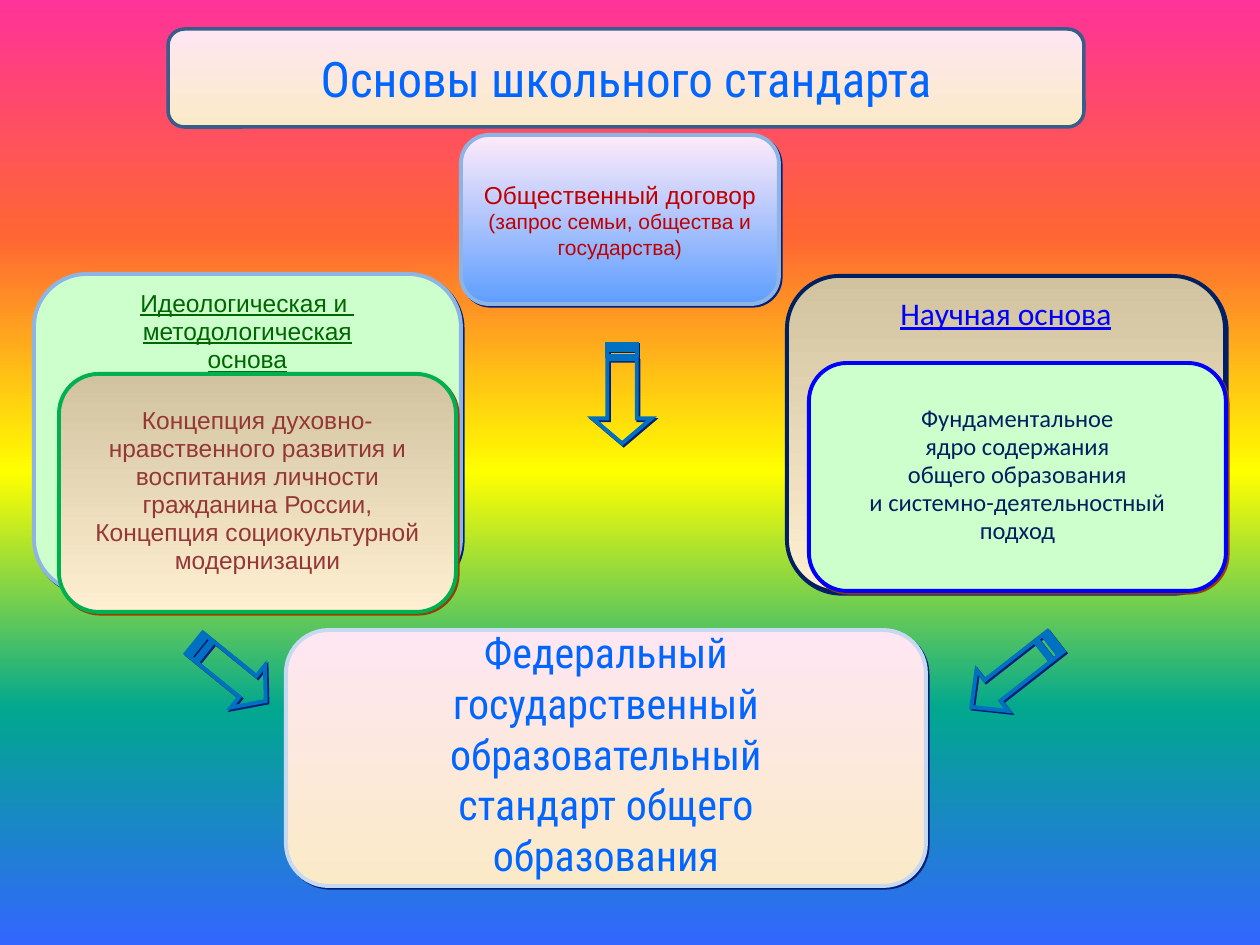
from dataclasses import dataclass

from lxml.etree import SubElement
from pptx import Presentation
from pptx.dml.color import RGBColor
from pptx.enum.shapes import MSO_SHAPE
from pptx.enum.text import MSO_ANCHOR, MSO_AUTO_SIZE, PP_ALIGN
from pptx.oxml.ns import qn
from pptx.util import Emu, Pt


@dataclass(frozen=True)
class Theme:
    rainbow: tuple = ("FF3399", "FF6633", "FFFF00", "01A78F", "3366FF")
    cream: tuple = ("FEE7F2", "FBEAC7")
    sky: tuple = ("FFEBFA", "5E9EFF")
    sand: tuple = ("D1C39F", "FFEFD1")
    mint: tuple = ("CCFFCC",)
    title_line: str = "385D8A"
    blue_line: str = "8EB4E3"
    pale_line: str = "C6D9F1"
    arrow_line: str = "0070C0"
    green_line: str = "00B050"
    navy: str = "002060"
    blue: str = "0000FF"
    accent: str = "0066FF"
    red: str = "C00000"
    brown: str = "953735"
    green: str = "006600"
    navy_shadow: str = "001F7A"
    brown_shadow: str = "993D00"
    sans: str = "Arial"
    plain: str = "Calibri"
    display: str = "Roboto Condensed"
    title: int = 28
    result: int = 24
    heading: int = 18
    body: int = 14
    small: int = 12
    line: float = 2.25


T = Theme()


def px(n):
    return Emu(round(n * 914400 / 126))


def rgb(value):
    return RGBColor.from_string(value)


def paint(sp, colors, line, width=T.line, shadow=None):
    if not colors:
        sp.fill.background()
    elif len(colors) == 1:
        sp.fill.solid()
        sp.fill.fore_color.rgb = rgb(colors[0])
    else:
        sp.fill.gradient()
        sp.fill.gradient_angle = 270
        for stop, color in zip(sp.fill.gradient_stops, colors):
            stop.color.rgb = rgb(color)
    sp.line.color.rgb = rgb(line)
    sp.line.width = Pt(width)
    sp.shadow.inherit = False
    if shadow:
        effects = sp.element.spPr.find(qn("a:effectLst"))
        outer = SubElement(effects, qn("a:outerShdw"), blurRad="0", dist=str(Pt(1.4)),
                           dir="2700000", algn="ctr", rotWithShape="0")
        SubElement(outer, qn("a:srgbClr"), val=shadow)


def write(sp, lines, font, color, underline=False, spacing=1.0, before=0, top=None):
    tf = sp.text_frame
    tf.auto_size = MSO_AUTO_SIZE.NONE
    tf.word_wrap = False
    tf.vertical_anchor = MSO_ANCHOR.MIDDLE if top is None else MSO_ANCHOR.TOP
    if top is not None:
        tf.margin_top = px(top)
    for i, (text, size) in enumerate(lines):
        p = tf.add_paragraph() if i else tf.paragraphs[0]
        p.alignment = PP_ALIGN.CENTER
        p.line_spacing = spacing
        p.space_before = Pt(before)
        r = p.add_run()
        r.text = text
        r.font.name = font
        r.font.size = Pt(size)
        r.font.color.rgb = rgb(color)
        r.font.underline = underline


def sized(size, *texts):
    return [(text, size) for text in texts]


def rounded(s, box, colors, line, width=T.line, shadow=None):
    sp = s.shapes.add_shape(MSO_SHAPE.ROUNDED_RECTANGLE, *map(px, box))
    paint(sp, colors, line, width, shadow)
    return sp


def background(s):
    s.background.fill.gradient()
    s.background.fill.gradient_angle = 270
    stops = s.element.find(".//" + qn("a:gsLst"))
    for stop in list(stops):
        stops.remove(stop)
    for i, color in enumerate(T.rainbow):
        stop = SubElement(stops, qn("a:gs"), pos=str(i * 25000))
        SubElement(stop, qn("a:srgbClr"), val=color)


def title(s, box, text):
    frame = rounded(s, box, T.cream, T.title_line, 2)
    sp = s.shapes.title
    sp.left, sp.top, sp.width, sp.height = map(px, box)
    frame.element.addnext(sp.element)
    write(sp, sized(T.title, text), T.display, T.accent)


def card(s, box, colors, line, shadow, lines, font, color, **style):
    sp = rounded(s, box, colors, line, shadow=shadow)
    write(sp, lines, font, color, **style)


def pillar(s, box, inner, outer_look, inner_look, top):
    x, y, w, h = box
    dx, dy, iw, ih = inner
    colors, line, lines, font, color = outer_look
    card(s, box, colors, line, T.navy_shadow, lines, font, color,
         underline=True, spacing=0.75, before=3.5, top=top)
    colors, line, lines, font, color = inner_look
    card(s, (x + dx, y + dy, iw, ih), colors, line, T.brown_shadow, lines, font, color,
         spacing=0.75, before=3.5)


def arrow(s, box, angle):
    x, y, w, h = box

    def at(col, row):
        return px(x + w * col / 32), px(y + h * row / 4)

    body = [(24, 0), (24, 1), (5, 1), (5, 3), (24, 3), (24, 4), (32, 2)]
    stripes = [[(a, 1), (b, 1), (b, 3), (a, 3)] for a, b in ((2, 4), (0, 1))]
    fb = s.shapes.build_freeform(*at(*body[0]))
    fb.add_line_segments([at(*pt) for pt in body[1:]])
    for stripe in stripes:
        fb.move_to(*at(*stripe[0]))
        fb.add_line_segments([at(*pt) for pt in stripe[1:]])
    sp = fb.convert_to_shape()
    sp.rotation = angle
    paint(sp, (), T.arrow_line, shadow=T.navy_shadow)
    SubElement(sp.element.spPr.find(qn("a:ln")), qn("a:miter"), lim="800000")


def main():
    prs = Presentation()
    prs.slide_width, prs.slide_height = px(1260), px(945)
    s = prs.slides.add_slide(prs.slide_layouts[5])
    background(s)
    title(s, (168, 29, 916, 98), "Основы школьного стандарта")
    card(s, (461, 135, 318, 169), T.sky, T.blue_line, T.navy_shadow,
         sized(T.body, "Общественный договор")
         + sized(T.small, "(запрос семьи, общества и", "государства)"),
         T.sans, T.red)
    pillar(s, (34, 274, 427, 318), (25, 100, 397, 238),
           (T.mint, T.blue_line,
            sized(T.body, "Идеологическая и ", "методологическая", "основа"),
            T.sans, T.green),
           (T.sand, T.green_line,
            sized(T.body, "Концепция духовно-", "нравственного развития и",
                  "воспитания личности", "гражданина России,",
                  "Концепция социокультурной", "модернизации"),
            T.sans, T.brown), 5)
    pillar(s, (787, 276, 438, 316), (22, 87, 417, 228),
           (T.sand, T.navy, sized(T.heading, "Научная основа"), T.plain, T.blue),
           (T.mint, T.blue,
            sized(T.body, "Фундаментальное", "ядро содержания", "общего образования",
                  "и системно-деятельностный", "подход"),
            T.plain, T.navy), 11)
    card(s, (286, 630, 640, 256), T.cream, T.pale_line, T.navy_shadow,
         sized(T.result, "Федеральный", "государственный", "образовательный",
               "стандарт общего", "образования"),
         T.display, T.accent, spacing=0.8, before=6)
    for box, angle in (((572, 364, 100, 59), 90), ((184, 645, 92, 54), 39),
                       ((960, 648, 107, 52), 142)):
        arrow(s, box, angle)
    prs.save("out.pptx")


if __name__ == "__main__":
    main()
